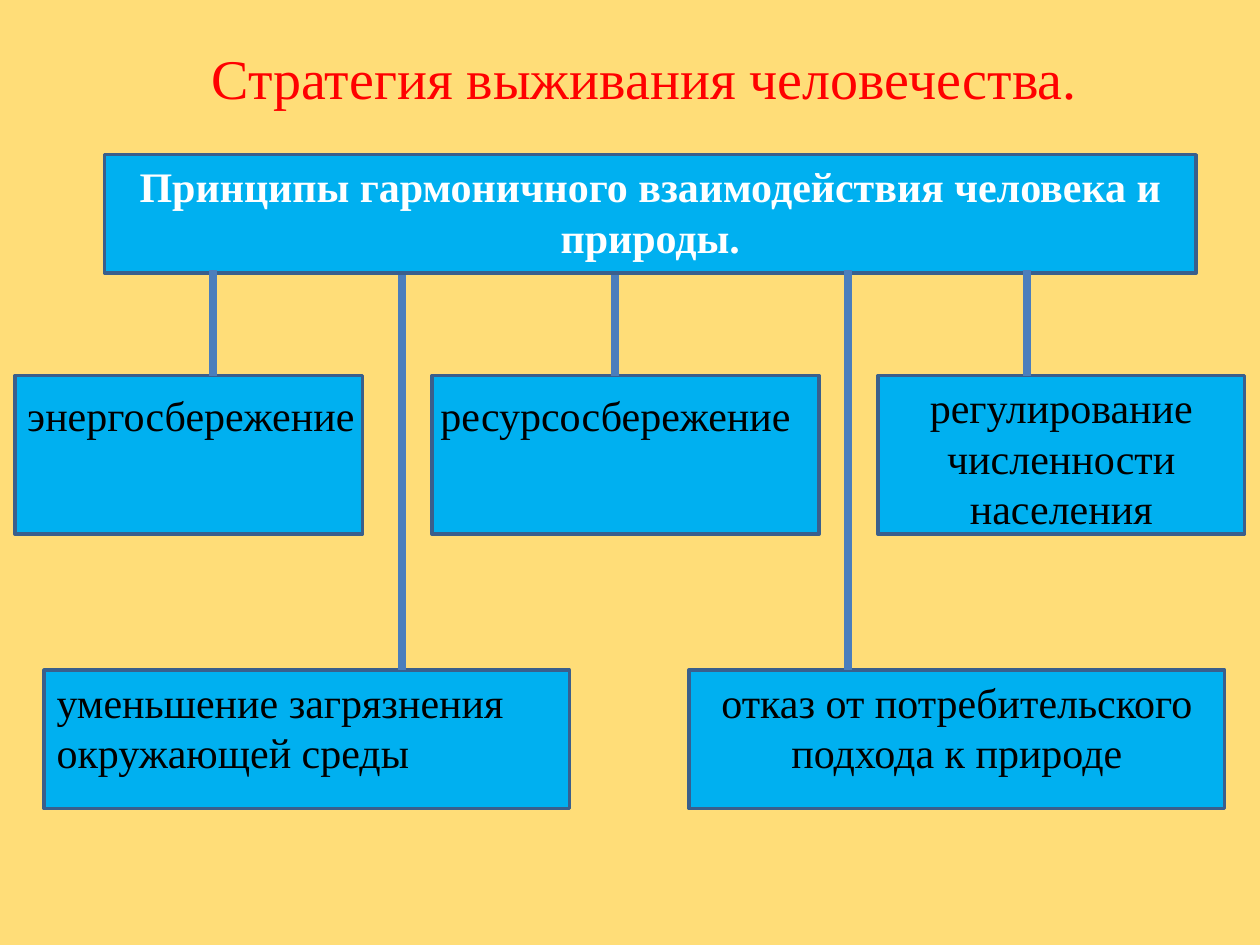
from lxml import etree
from pptx import Presentation
from pptx import util as u
from pptx.dml.color import RGBColor
from pptx.enum import shapes, text
from pptx.oxml.ns import qn

SAND = RGBColor(0xFF, 0xDD, 0x78)
SKY = RGBColor(0x00, 0xB0, 0xF0)
OUTLINE = RGBColor(0x3A, 0x5F, 0x8C)
STEEL = RGBColor(0x4B, 0x7E, 0xBC)
RED = RGBColor(0xFF, 0x00, 0x00)
WHITE = RGBColor(0xFF, 0xFF, 0xFF)
BLACK = RGBColor(0x00, 0x00, 0x00)

LEFT, CENTER = text.PP_ALIGN.LEFT, text.PP_ALIGN.CENTER
ROW_TOP, ROW_HEIGHT = 7.57, 3.2
BOTTOM_TOP, BOTTOM_HEIGHT = 13.51, 2.79

# left, top, width, height in cm
HEADER = (2.11, 3.12, 22, 2.39)
BOXES = [(x, ROW_TOP, w, ROW_HEIGHT) for x, w in ((0.3, 7.01), (8.71, 7.8), (17.7, 7.39))]
BOXES += [(x, BOTTOM_TOP, w, BOTTOM_HEIGHT) for x, w in ((0.89, 10.59), (13.89, 10.8))]

PRINCIPLES = [
    ("энергосбережение", (0.3, 7.72, 7.39, 1.27), LEFT),
    ("ресурсосбережение", (8.31, 7.72, 8.2, 1.27), CENTER),
    ("регулирование численности населения", (17.7, ROW_TOP, 7.39, 3.33), CENTER),
    ("уменьшение загрязнения окружающей среды", (0.89, BOTTOM_TOP, 10.59, 2.31), LEFT),
    ("отказ от потребительского подхода к природе", (13.89, BOTTOM_TOP, 10.8, 2.31), CENTER),
]

# x, top, bottom in cm
BRANCHES = [
    (4.29, 5.44, ROW_TOP),
    (12.4, 5.54, ROW_TOP),
    (20.7, 5.44, ROW_TOP),
    (8.1, 5.54, BOTTOM_TOP),
    (17.09, 5.44, BOTTOM_TOP),
]


def cm(values):
    return [u.Cm(v) for v in values]


def write(tf, wording, size=24, color=BLACK, bold=False, align=CENTER,
          anchor=text.MSO_ANCHOR.TOP, font="Times New Roman"):
    tf.word_wrap = True
    tf.vertical_anchor = anchor
    p = tf.paragraphs[0]
    p.alignment = align
    r = p.add_run()
    r.text = wording
    r.font.name = font
    r.font.size = u.Pt(size)
    r.font.bold = bold
    r.font.color.rgb = color


class Diagram:
    """Slide with the fill and line style shared by its boxes and branches."""

    def __init__(self, slide, fill=SKY, outline=OUTLINE, branch=STEEL):
        self.s = slide
        self.fill, self.outline, self.branch_color = fill, outline, branch

    def background(self, color):
        fill = self.s.background.fill
        fill.solid()
        fill.fore_color.rgb = color

    def title(self, wording, area):
        sp = self.s.shapes.title
        sp.left, sp.top, sp.width, sp.height = cm(area)
        write(sp.text_frame, wording, size=32, color=RED)

    def box(self, area):
        sp = self.s.shapes.add_shape(shapes.MSO_SHAPE.RECTANGLE, *cm(area))
        sp.shadow.inherit = False
        sp.fill.solid()
        sp.fill.fore_color.rgb = self.fill
        sp.line.color.rgb = self.outline
        sp.line.width = u.Pt(2)

    def label(self, wording, area, **style):
        sp = self.s.shapes.add_textbox(*cm(area))
        write(sp.text_frame, wording, **style)

    def branch(self, x, top, bottom):
        line = self.s.shapes.add_connector(
            shapes.MSO_CONNECTOR.STRAIGHT, *cm((x, top, x, bottom)))
        line.line.color.rgb = self.branch_color
        line.line.width = u.Pt(4.5)
        etree.SubElement(line._element.spPr, qn("a:effectLst"))


def main():
    prs = Presentation()
    prs.slide_width, prs.slide_height = cm((25.4, 19.05))
    title_only = prs.slide_layouts[5]
    d = Diagram(prs.slides.add_slide(title_only))

    d.background(SAND)
    d.title("Стратегия выживания человечества.", (0.89, 0.74, 24.21, 1.63))
    d.box(HEADER)
    d.label("Принципы гармоничного взаимодействия человека и природы.",
            HEADER, color=WHITE, bold=True)
    for area in BOXES:
        d.box(area)
    for wording, area, align in PRINCIPLES:
        d.label(wording, area, align=align)
    for branch in BRANCHES:
        d.branch(*branch)

    prs.save("out.pptx")


if __name__ == "__main__":
    main()
